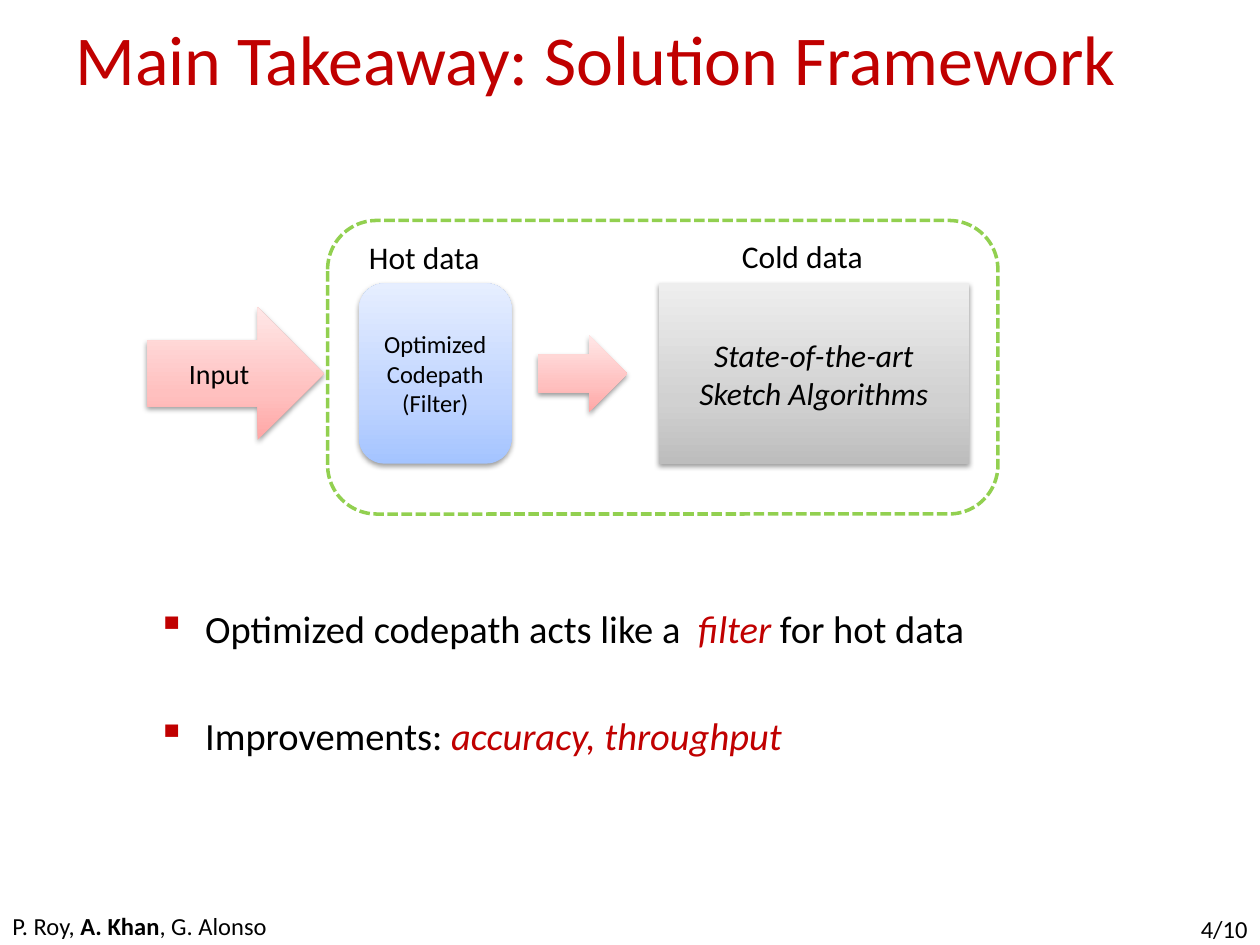
from lxml import etree
from pptx import Presentation
from pptx.dml.color import RGBColor
from pptx.enum.dml import MSO_LINE
from pptx.enum.shapes import MSO_SHAPE
from pptx.enum.text import MSO_ANCHOR, PP_ALIGN
from pptx.oxml.ns import qn
from pptx.util import Inches, Pt

RECT, ROUNDED, ARROW = MSO_SHAPE.RECTANGLE, MSO_SHAPE.ROUNDED_RECTANGLE, MSO_SHAPE.RIGHT_ARROW
LEFT, CENTER, RIGHT = PP_ALIGN.LEFT, PP_ALIGN.CENTER, PP_ALIGN.RIGHT
TOP, MIDDLE = MSO_ANCHOR.TOP, MSO_ANCHOR.MIDDLE
DASH = MSO_LINE.SQUARE_DOT

FONT = "Calibri"
COLORS = {"text": "000000", "accent": "C00000", "frame": "92D050", "shadow": "000000"}
# Gradient stops from bottom to top, placed at STOPS percent
STOPS = (0, 35, 100)
GRADIENTS = {
    "hot": ("A4C4FF", "BFD4FF", "E6EEFF"),
    "cold": ("BDBDBD", "D1D1D1", "EEEEEE"),
    "flow": ("FFA6A5", "FFC0BF", "FFE7E7"),
}


def sub(parent, tag, **attrs):
    """Append a DrawingML child element."""
    return etree.SubElement(parent, qn(tag), {k: str(v) for k, v in attrs.items()})


class SlideBuilder:
    def __init__(self, prs):
        self.slide = prs.slides.add_slide(prs.slide_layouts[5])

    def add_runs(self, p, runs, size, align=LEFT):
        """Add runs given as (text, options); options are color, bold, italic."""
        p.alignment = align
        for text, options in runs:
            r = p.add_run()
            r.text = text
            r.font.name = FONT
            r.font.size = Pt(size)
            r.font.bold = options.get("bold", False)
            r.font.italic = options.get("italic", False)
            r.font.color.rgb = RGBColor.from_string(COLORS[options.get("color", "text")])

    def title(self, text, x, y, w, h):
        sp = self.slide.shapes.title
        sp.left, sp.top, sp.width, sp.height = map(Inches, (x, y, w, h))
        tf = sp.text_frame
        tf.vertical_anchor = MIDDLE
        self.add_runs(tf.paragraphs[0], [(text, {"color": "accent"})], 40)

    def text_frame(self, x, y, w, h, wrap=True, anchor=TOP):
        tf = self.slide.shapes.add_textbox(*map(Inches, (x, y, w, h))).text_frame
        tf.word_wrap = wrap
        tf.vertical_anchor = anchor
        return tf

    def label(self, runs, x, y, w, h, size, align=LEFT, wrap=True, anchor=TOP):
        tf = self.text_frame(x, y, w, h, wrap, anchor)
        self.add_runs(tf.paragraphs[0], runs, size, align)

    def block(self, kind, gradient, x, y, w, h, lines=(), size=18, **options):
        """Draw a shaded shape with a soft shadow and centred lines of text."""
        sp = self.slide.shapes.add_shape(kind, *map(Inches, (x, y, w, h)))
        sp.line.fill.background()
        sp.fill.gradient()
        sp.fill.gradient_angle = 90
        stops = next(sp.element.iter(qn("a:gsLst")))
        for old in list(stops):
            stops.remove(old)
        for pos, color in zip(STOPS, GRADIENTS[gradient]):
            sub(sub(stops, "a:gs", pos=pos * 1000), "a:srgbClr", val=color)
        sp.shadow.inherit = False
        effects = next(sp.element.iter(qn("a:effectLst")))
        shadow = sub(effects, "a:outerShdw", blurRad=int(Pt(3.1)), dist=int(Pt(1.6)),
                     dir=90 * 60000, rotWithShape=0)
        sub(sub(shadow, "a:srgbClr", val=COLORS["shadow"]), "a:alpha", val=38000)
        tf = sp.text_frame
        tf.word_wrap = True
        tf.vertical_anchor = MIDDLE
        for i, line in enumerate(lines):
            p = tf.add_paragraph() if i else tf.paragraphs[0]
            self.add_runs(p, [(line, options)], size, CENTER)

    def frame(self, x, y, w, h):
        sp = self.slide.shapes.add_shape(ROUNDED, *map(Inches, (x, y, w, h)))
        sp.shadow.inherit = False
        sp.fill.background()
        sp.line.color.rgb = RGBColor.from_string(COLORS["frame"])
        sp.line.width = Pt(2)
        sp.line.dash_style = DASH

    def bullets(self, items, x, y, w, h, size, gap):
        tf = self.text_frame(x, y, w, h)
        indent = int(Inches(0.38))
        for i, runs in enumerate(items):
            p = tf.add_paragraph() if i else tf.paragraphs[0]
            self.add_runs(p, runs, size)
            p.space_before = Pt(gap if i else 4.4)
            pPr = next(p._p.iter(qn("a:pPr")))
            pPr.set("marL", str(indent))
            pPr.set("indent", str(-indent))
            sub(sub(pPr, "a:buClr"), "a:srgbClr", val=COLORS["accent"])
            sub(pPr, "a:buChar", char="▪")


def main():
    prs = Presentation()
    prs.slide_width, prs.slide_height = Inches(10), Inches(7.5)
    s = SlideBuilder(prs)
    s.title("Main Takeaway: Solution Framework", 0.5, 0, 9, 0.92)

    box_top, box_height = 2.25, 1.43
    s.block(ROUNDED, "hot", 2.85, box_top, 1.21, box_height,
            ["Optimized", "Codepath (Filter)"], 14)
    s.label([("Hot data", {})], 2.83, 1.84, 1.09, 0.4, 18, wrap=False)
    s.block(RECT, "cold", 5.23, box_top, 2.46, box_height,
            ["State-of-the-art Sketch Algorithms"], 18, italic=True)
    s.label([("Cold data", {})], 5.79, 1.83, 1.17, 0.4, 18, wrap=False)
    s.block(ARROW, "flow", 1.17, 2.44, 1.4, 1.05, ["Input"], 16)
    s.block(ARROW, "flow", 4.27, 2.66, 0.71, 0.61)
    s.frame(2.6, 1.75, 5.32, 2.33)

    emphasis = {"color": "accent", "italic": True}
    s.bullets([
        [("Optimized codepath acts like a ", {}), (" filter ", emphasis), ("for hot data", {})],
        [("Improvements: ", {}), ("accuracy, throughput", emphasis)],
    ], 1.15, 4.75, 8.6, 2.17, size=22, gap=35)

    s.label([("4/10", {})], 7.67, 7.17, 2.33, 0.4, 14, RIGHT, anchor=MIDDLE)
    s.label([("P. Roy, ", {}), ("A. Khan", {"bold": True}), (", G. Alonso", {})],
            0, 7.18, 4.92, 0.4, 14)
    prs.save("out.pptx")


if __name__ == "__main__":
    main()
